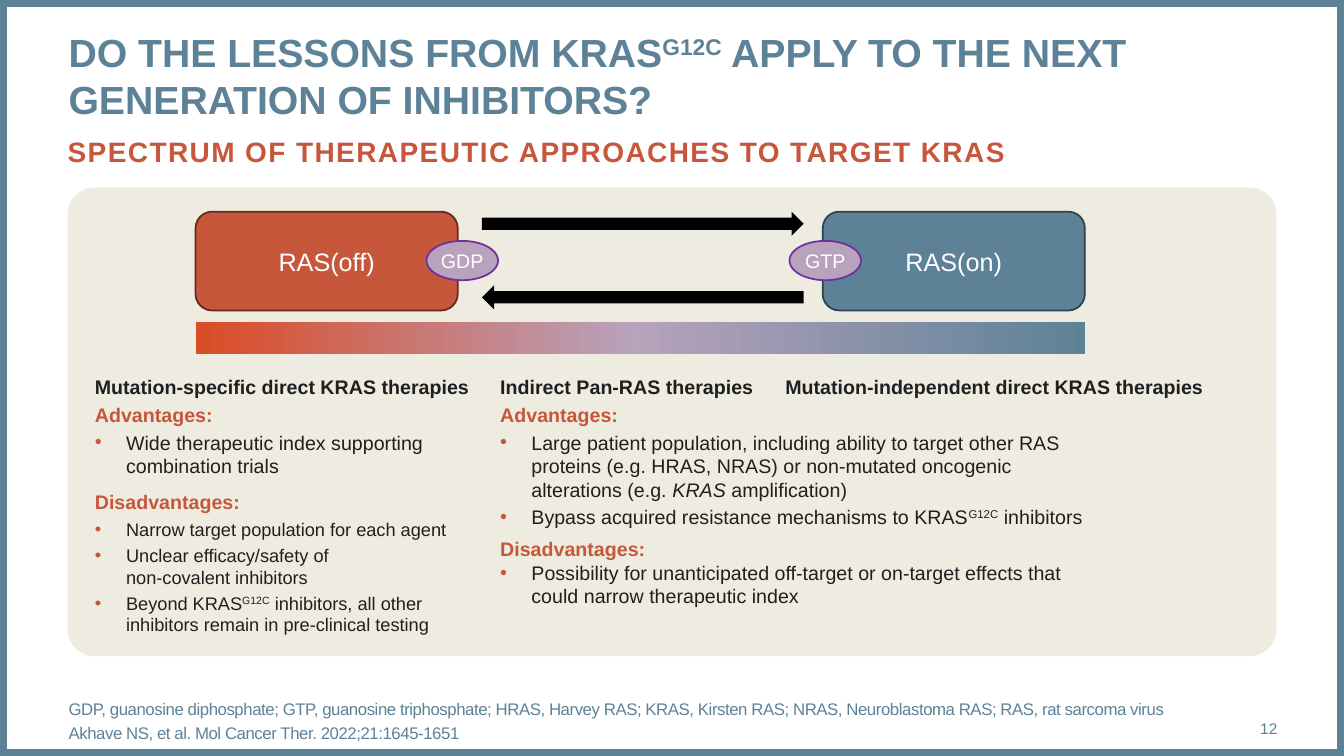
from collections import namedtuple
from copy import deepcopy
from dataclasses import dataclass

from lxml.etree import SubElement as Sub
from pptx import Presentation
from pptx.dml.color import RGBColor as Rgb
from pptx.enum.shapes import MSO_SHAPE as Kind
from pptx.enum.text import MSO_ANCHOR as Anchor, MSO_AUTO_SIZE as Fit, PP_ALIGN as Align
from pptx.oxml.ns import qn
from pptx.util import Inches, Pt


@dataclass(frozen=True)
class Theme:
    font: str = "Arial"
    blue: str = "5D8298"
    navy: str = "2E414C"
    rust: str = "C6573B"
    brick: str = "C7573C"
    wine: str = "642B1D"
    flame: str = "DB4B26"
    mauve: str = "B8A2BC"
    plum: str = "7030A0"
    sand: str = "EEECE1"
    ink: str = "1F1F1F"
    white: str = "FFFFFF"
    black: str = "000000"
    title: float = 28
    sub: float = 20
    label: float = 18
    text: float = 14
    small: float = 13
    note: float = 12
    page: float = 11


T = Theme()


class Box(namedtuple("Box", "x y w h")):
    def cut(self, x, y, w, h):
        """Inner box, given in percent of this one."""
        return Box(self.x + self.w * x / 100, self.y + self.h * y / 100,
                   self.w * w / 100, self.h * h / 100)


# Styles of text: font values, plus letter spacing and bullet
STYLES = {
    "title": dict(size=T.title, color=T.blue, bold=True),
    "sub": dict(size=T.sub, color=T.brick, bold=True, track=100),
    "note": dict(size=T.note, color=T.blue, track=-30),
    "page": dict(size=T.page, color=T.blue),
    "label": dict(size=T.label, color=T.white),
    "tag": dict(size=T.text, color=T.white),
    "head": dict(size=T.text, color=T.ink, bold=True),
    "lead": dict(size=T.text, color=T.rust, bold=True),
    "item": dict(size=T.text, color=T.ink, bullet=True),
    "fine": dict(size=T.small, color=T.ink, bullet=True),
}

# Rows of text: style, wording, space before, space after.
# A bar parts runs; ^ marks a raised run and _ a slanted one.
NARROW = [
    ("head", "Mutation-specific direct KRAS therapies", 0, 3),
    ("lead", "Advantages:", 0, 3),
    ("item", "Wide therapeutic index supporting \ncombination trials", 0, 3),
    ("lead", "Disadvantages:", 6, 3),
    ("fine", "Narrow target population for each agent", 0, 3),
    ("fine", "Unclear efficacy/safety of\nnon-covalent inhibitors", 0, 3),
    ("fine", "Beyond KRAS|^G12C| inhibitors, all other \n"
             "inhibitors remain in pre-clinical testing", 0, 3),
]
BROAD = [
    ("head", "Indirect Pan-RAS therapies", 0, 3),
    ("lead", "Advantages:", 0, 3),
    ("item", "Large patient population, including ability to target other RAS\n"
             "proteins (e.g. HRAS, NRAS) or non-mutated oncogenic\n"
             "alterations (e.g. |_KRAS| amplification)", 0, 0),
    ("item", "Bypass acquired resistance mechanisms to KRAS|^G12C| inhibitors", 3, 0),
    ("lead", "Disadvantages:", 6, 0),
    ("item", "Possibility for unanticipated off-target or on-target effects that\n"
             "could narrow therapeutic index", 0, 0),
]
DIRECT = [("head", "Mutation-independent direct KRAS therapies", 0, 0)]
TITLE = [("title", "DO THE LESSONS FROM KRAS|^G12C| APPLY TO THE NEXT "
                   "GENERATION OF INHIBITORS?", 0, 0)]
SUB = [("sub", "SPECTRUM OF THERAPEUTIC APPROACHES TO TARGET KRAS", 0, 0)]
NOTES = [
    ("note", "GDP, guanosine diphosphate; GTP, guanosine triphosphate; HRAS, Harvey RAS; "
             "KRAS, Kirsten RAS; NRAS, Neuroblastoma RAS; RAS, rat sarcoma virus", 0, 0),
    ("note", "Akhave NS, et al. Mol Cancer Ther. 2022;21:1645-1651", 3, 0),
]


def apply(item, values):
    for name, value in values.items():
        setattr(item, name, value)


def place(shape, box):
    apply(shape, dict(zip(("left", "top", "width", "height"), map(Inches, box))))


def add_run(para, text, style, mark):
    run = para.add_run()
    run.text = text
    apply(run.font, dict(name=T.font, size=Pt(style["size"]),
                         bold=style.get("bold", False), italic=mark == "_"))
    run.font.color.rgb = Rgb.from_string(style["color"])
    props = run.font._element
    if "track" in style:
        props.set("spc", str(style["track"]))
    if mark == "^":
        props.set("baseline", "30000")
    return props


def add_bullet(para, on):
    props = para._p.get_or_add_pPr()
    gap = Inches(0.31) if on else 0
    props.set("marL", str(gap))
    props.set("indent", str(-gap))
    if on:
        Sub(Sub(props, qn("a:buClr")), qn("a:srgbClr"), val=T.rust)
        Sub(props, qn("a:buFont"), typeface=T.font)
        Sub(props, qn("a:buChar"), char="•")
    else:
        Sub(props, qn("a:buNone"))


def write(shape, rows, pads=(0, 0), align=Align.LEFT, anchor=Anchor.TOP):
    """Fill a shape with rows; pads are the side and the top insets."""
    side, top = map(Inches, pads)
    frame = shape.text_frame
    apply(frame, dict(margin_left=side, margin_right=side, margin_top=top, margin_bottom=top,
                      word_wrap=True, auto_size=Fit.NONE, vertical_anchor=anchor))
    for num, (name, text, before, after) in enumerate(rows):
        para = frame.add_paragraph() if num else frame.paragraphs[0]
        style = STYLES[name]
        add_bullet(para, style.get("bullet"))
        apply(para, dict(alignment=align, space_before=Pt(before), space_after=Pt(after)))
        for piece in text.split("|"):
            mark = piece[0] if piece[0] in "^_" else ""
            for turn, line in enumerate(piece[len(mark):].split("\n")):
                if turn:
                    para.add_line_break()
                    para._p[-1].append(deepcopy(props))
                props = add_run(para, line, style, mark)


def draw(slide, kind, box, fill=None, line=None, width=1.25):
    shape = slide.shapes.add_shape(kind, *map(Inches, box))
    shape.shadow.inherit = False
    if fill:
        shape.fill.solid()
        shape.fill.fore_color.rgb = Rgb.from_string(fill)
    else:
        shape.fill.background()
    if line:
        shape.line.color.rgb = Rgb.from_string(line)
        shape.line.width = Pt(width)
    else:
        shape.line.fill.background()
    return shape


def back(slide, page, panel):
    """Draw the frame and the panel behind the placeholders."""
    frame = draw(slide, Kind.RECTANGLE, page, line=T.blue, width=10)
    board = draw(slide, Kind.ROUNDED_RECTANGLE, panel, T.sand)
    board.adjustments[0] = 0.058
    for shape in (board, frame):
        slide.shapes._spTree.insert(2, shape._element)


def heads(title, sub, page):
    place(title, page.cut(5.1, 3.73, 89.95, 12.53))
    write(title, TITLE)
    place(sub, page.cut(5.03, 17.73, 90.02, 10.27))
    write(sub, SUB)


def cycle(slide, box):
    """Show both states of RAS, the arrows between them and the spectrum."""
    wide = 29.48
    mid = dict(align=Align.CENTER, anchor=Anchor.MIDDLE)
    for x, text, fill, line in ((0, "RAS(off)", T.rust, T.wine),
                                (100 - wide, "RAS(on)", T.blue, T.navy)):
        state = draw(slide, Kind.ROUNDED_RECTANGLE, box.cut(x, 0, wide, 69.5), fill, line)
        write(state, [("label", text, 0, 0)], (0.1, 0.05), **mid)
    for y, kind in ((0, Kind.RIGHT_ARROW), (51.77, Kind.LEFT_ARROW)):
        draw(slide, kind, box.cut(32.2, y, 36.17, 17.02), T.black)
    blend(draw(slide, Kind.RECTANGLE, box.cut(0, 78, 100, 22), T.mauve))
    for x, text in ((25.96, "GDP"), (66.78, "GTP")):
        tag = draw(slide, Kind.OVAL, box.cut(x, 20.57, 8.05, 27.66), T.mauve, T.plum)
        write(tag, [("tag", text, 0, 0)], (0, 0.05), **mid)


def blend(bar):
    bar.fill.gradient()
    bar.fill.gradient_angle = 0
    stops = bar._element.spPr.find(".//" + qn("a:gsLst"))
    stops.insert(1, deepcopy(stops[0]))
    for stop, at, tone in zip(bar.fill.gradient_stops, (0, 0.49, 1),
                              (T.flame, T.mauve, T.blue)):
        stop.position = at
        stop.color.rgb = Rgb.from_string(tone)


def lists(slide, left, mid, panel):
    right = slide.shapes.add_textbox(0, 0, 0, 0)
    for shape, rows, x, w, h in ((left, NARROW, 1.42, 32.9, 58.28),
                                 (mid, BROAD, 34.95, 51.88, 57),
                                 (right, DIRECT, 58.55, 36.5, 7.31)):
        place(shape, panel.cut(x, 38.92, w, h))
        write(shape, rows, (0.1, 0.05))


def foot(slide, notes, page):
    place(notes, page.cut(5.1, 92.67, 83.5, 5.33))
    write(notes, NOTES, anchor=Anchor.MIDDLE)
    num = slide.shapes.add_textbox(0, 0, 0, 0)
    place(num, page.cut(88.6, 93.73, 6.45, 5.33))
    write(num, [("page", "12", 0, 0)], align=Align.RIGHT, anchor=Anchor.MIDDLE)


def main():
    deck = Presentation()
    page = Box(0, 0, 13.33, 7.5)
    apply(deck, dict(slide_width=Inches(page.w), slide_height=Inches(page.h)))
    slide = deck.slides.add_slide(deck.slide_layouts[4])
    title, sub, left, notes, mid = slide.placeholders
    panel = page.cut(5.03, 24.8, 89.95, 62)
    back(slide, page, panel)
    heads(title, sub, page)
    cycle(slide, panel.cut(10.59, 5.16, 73.56, 30.32))
    lists(slide, left, mid, panel)
    foot(slide, notes, page)
    deck.save("out.pptx")


if __name__ == "__main__":
    main()
